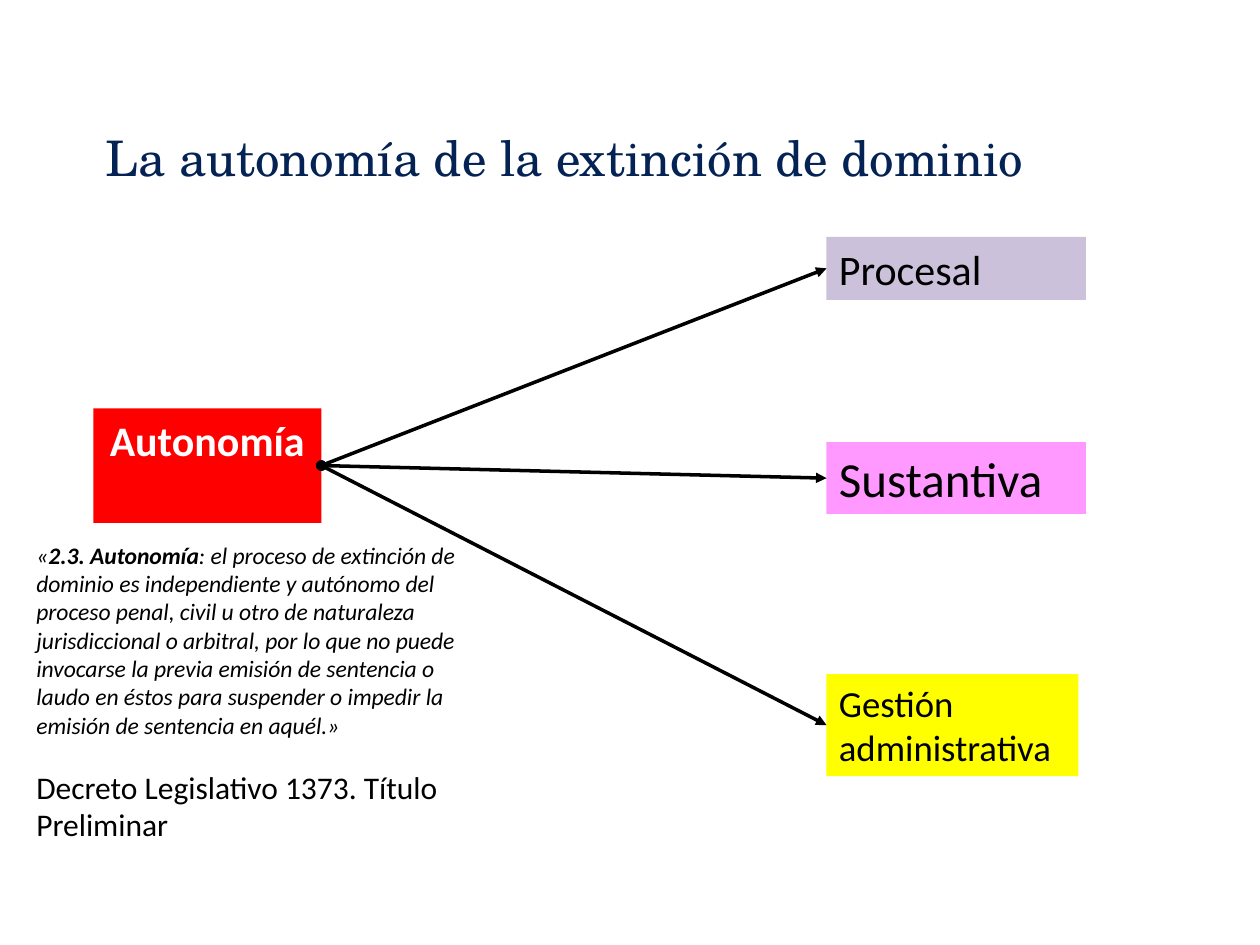
import pptx
import pptx.util
import pptx.dml.color
import pptx.enum.shapes
import pptx.enum.text
import pptx.oxml
import pptx.oxml.ns

Inches, Pt = pptx.util.Inches, pptx.util.Pt
RGBColor = pptx.dml.color.RGBColor
PP_ALIGN = pptx.enum.text.PP_ALIGN

NAVY = RGBColor(0x04, 0x23, 0x54)
BLACK = RGBColor(0x00, 0x00, 0x00)
WHITE = RGBColor(0xFF, 0xFF, 0xFF)
RED = RGBColor(0xFF, 0x00, 0x00)
LILAC = RGBColor(0xCC, 0xC1, 0xDA)
PINK = RGBColor(0xFF, 0x99, 0xFF)
YELLOW = RGBColor(0xFF, 0xFF, 0x00)

BODY_FONT = "Calibri"
TITLE_FONT = "TeX Gyre Schola"

# Branches: text, size, fill, top, width, height
BRANCH_LEFT = 6.56
BRANCHES = [
    ("Procesal", 24, LILAC, 1.88, 2.06, 0.5),
    ("Sustantiva", 28, PINK, 3.51, 2.06, 0.57),
    ("Gestión administrativa", 21, YELLOW, 5.35, 2, 0.81),
]

QUOTE = [
    ("«", False),
    ("2.3. Autonomía", True),
    (": el proceso de extinción de dominio es independiente y autónomo del "
     "proceso penal, civil u otro de naturaleza jurisdiccional o arbitral, "
     "por lo que no puede invocarse la previa emisión de sentencia o", False),
]
QUOTE_END = ("laudo en éstos para suspender o impedir la emisión de sentencia "
             "en aquél.»")
CITATION = "Decreto Legislativo 1373. Título Preliminar"


def add_run(p, text, size, color=BLACK, font=BODY_FONT, bold=False, italic=False):
    r = p.add_run()
    r.text = text
    r.font.name, r.font.size = font, Pt(size)
    r.font.bold, r.font.italic = bold, italic
    r.font.color.rgb = color


def add_textbox(slide, left, top, width, height):
    box = slide.shapes.add_textbox(Inches(left), Inches(top), Inches(width), Inches(height))
    box.text_frame.word_wrap = True
    return box.text_frame


def add_box(slide, left, top, width, height, fill, text, size,
            color=BLACK, bold=False, align=PP_ALIGN.LEFT):
    sp = slide.shapes.add_shape(pptx.enum.shapes.MSO_SHAPE.RECTANGLE, Inches(left),
                                Inches(top), Inches(width), Inches(height))
    sp.shadow.inherit = False
    sp.fill.solid()
    sp.fill.fore_color.rgb = fill
    sp.line.fill.background()
    tf = sp.text_frame
    tf.word_wrap = True
    tf.vertical_anchor = pptx.enum.text.MSO_ANCHOR.TOP
    p = tf.paragraphs[0]
    p.alignment = align
    add_run(p, text, size, color, bold=bold)
    return sp


def add_arrow(slide, source, target):
    """Join the right side of source to the left side of target."""
    line = slide.shapes.add_connector(pptx.enum.shapes.MSO_CONNECTOR.STRAIGHT, 0, 0, 0, 0)
    line.begin_connect(source, 3)
    line.end_connect(target, 1)
    line.line.color.rgb = BLACK
    line.line.width = Pt(2)
    ln = line.line._get_or_add_ln()
    for tag, kind in (("a:headEnd", "oval"), ("a:tailEnd", "triangle")):
        end = pptx.oxml.ns.qn(tag)
        ln.append(ln.makeelement(end, {"type": kind}))
    sp_pr = line._element.spPr
    sp_pr.append(sp_pr.makeelement(pptx.oxml.ns.qn("a:effectLst"), {}))


def add_title(slide, left, top, width, height):
    tf = add_textbox(slide, left, top, width, height)
    tf.margin_left = tf.margin_right = tf.margin_top = tf.margin_bottom = Inches(0.1)
    add_run(tf.paragraphs[0], "La autonomía de la extinción de dominio", 28, NAVY, TITLE_FONT)


def add_diagram(slide, left, top, width, height):
    root = add_box(slide, left, top, width, height, RED, "Autonomía", 24,
                   WHITE, bold=True, align=PP_ALIGN.CENTER)
    for text, size, fill, b_top, b_width, b_height in BRANCHES:
        branch = add_box(slide, BRANCH_LEFT, b_top, b_width, b_height, fill, text, size)
        add_arrow(slide, root, branch)


def add_quote(slide, left, top, width, height):
    tf = add_textbox(slide, left, top, width, height)
    for text, bold in QUOTE:
        add_run(tf.paragraphs[0], text, 13.5, bold=bold, italic=True)
    add_run(tf.add_paragraph(), QUOTE_END, 13.5, italic=True)
    p = tf.add_paragraph()
    p.space_before = Pt(16.5)
    add_run(p, CITATION, 18)


def main():
    prs = pptx.Presentation()
    prs.slide_width, prs.slide_height = Inches(10), Inches(7.5)
    slide = prs.slides.add_slide(prs.slide_layouts[6])
    add_title(slide, 0.74, 0.91, 8.9, 0.67)
    add_diagram(slide, 0.74, 3.24, 1.81, 0.91)
    add_quote(slide, 0.19, 4.24, 3.75, 2.52)
    prs.save("out.pptx")


if __name__ == "__main__":
    main()
